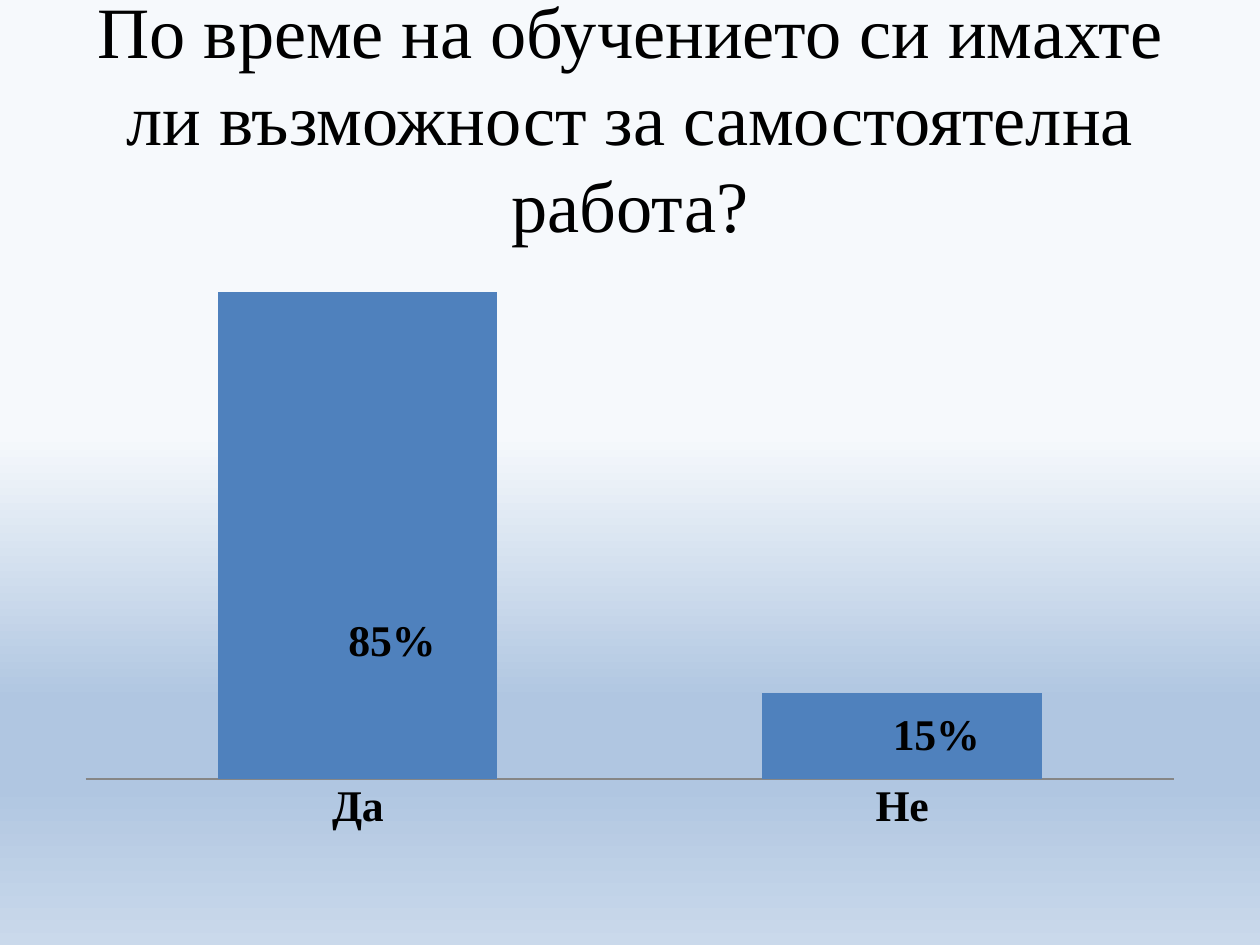
from lxml.etree import SubElement
from pptx import Presentation
from pptx.chart.data import CategoryChartData
from pptx.dml.color import RGBColor
from pptx.enum.chart import XL_CHART_TYPE, XL_TICK_MARK
from pptx.enum.text import MSO_ANCHOR, MSO_AUTO_SIZE, PP_ALIGN
from pptx.oxml.ns import qn
from pptx.util import Inches, Pt

COLORS = {
    "text": "000000",
    "bar": "4F81BD",
    "axis": "868686",
    "sky": "F6F9FC",
    "haze": "B0C6E1",
    "ground": "CAD9EB",
}
BACKGROUND_STOPS = [(46, "sky"), (74, "haze"), (83, "haze"), (100, "ground")]
FONT = "Times New Roman"
ANSWERS = {"Да": 0.85, "Не": 0.15}
LABEL_OFFSETS = [(0.03, 0.18), (0.03, 0)]


def rgb(name):
    return RGBColor.from_string(COLORS[name])


def style_font(font, size, bold=False, name=FONT):
    font.name = name
    font.size = Pt(size)
    font.bold = bold
    font.color.rgb = rgb("text")


def set_background(s):
    fill = s.background.fill
    fill.gradient()
    fill.gradient_angle = 270
    stops = s._element.find(".//" + qn("a:gsLst"))
    for stop in list(stops):
        stops.remove(stop)
    for percent, color in BACKGROUND_STOPS:
        stop = SubElement(stops, qn("a:gs"), pos=str(percent * 1000))
        SubElement(stop, qn("a:srgbClr"), val=COLORS[color])


def set_title(s, text):
    sp = s.shapes.title
    sp.left, sp.top = Inches(0.5), Inches(0.3)
    sp.width, sp.height = Inches(9), Inches(1.25)
    tf = sp.text_frame
    tf.text = text
    tf.vertical_anchor = MSO_ANCHOR.MIDDLE
    tf.auto_size = MSO_AUTO_SIZE.NONE
    tf.margin_left = tf.margin_right = Inches(0.2)
    p = tf.paragraphs[0]
    p.alignment = PP_ALIGN.CENTER
    style_font(p.font, 41.3)


def add_layout(parent, index, values):
    """Insert a manual chart layout; values are fractions of the chart size."""
    layout = SubElement(parent, qn("c:layout"))
    parent.insert(index, layout)
    manual = SubElement(layout, qn("c:manualLayout"))
    for tag, value in values.items():
        SubElement(manual, qn("c:" + tag), val=str(value))


def add_answer_chart(s):
    data = CategoryChartData(number_format="0%")
    data.categories = list(ANSWERS)
    data.add_series("Series 1", list(ANSWERS.values()))
    chart = s.shapes.add_chart(
        XL_CHART_TYPE.COLUMN_STACKED,
        Inches(0.5), Inches(2), Inches(9), Inches(4.7), data,
    ).chart
    chart.has_legend = False
    chart.has_title = False
    style_font(chart.font, 18, name="Calibri")

    axis = chart.category_axis
    axis.major_tick_mark = XL_TICK_MARK.NONE
    axis.format.line.color.rgb = rgb("axis")
    style_font(axis.tick_labels.font, 25, bold=True)
    scale = chart.value_axis
    scale.visible = False
    scale.has_major_gridlines = False
    scale.minimum_scale, scale.maximum_scale = 0, 0.9
    scale.tick_labels.number_format = "0%"
    scale.tick_labels.number_format_is_linked = False

    plot = chart.plots[0]
    plot.gap_width, plot.overlap = 95, 100
    plot_area = chart._chartSpace.chart.plotArea
    for layout in plot_area.findall(qn("c:layout")):
        plot_area.remove(layout)
    add_layout(plot_area, 0, {
        "layoutTarget": "inner", "xMode": "edge", "yMode": "edge",
        "x": 0.02, "y": 0.02, "w": 0.96, "h": 0.87,
    })
    label_bars(plot.series[0])


def label_bars(series):
    series.format.fill.solid()
    series.format.fill.fore_color.rgb = rgb("bar")
    labels = series.data_labels
    labels.show_value = True
    labels.number_format = "0%"
    labels.number_format_is_linked = False
    style_font(labels.font, 25, bold=True)
    for leader in labels._element.findall(qn("c:showLeaderLines")):
        leader.set("val", "0")
    for i, (x, y) in enumerate(LABEL_OFFSETS):
        label = series.points[i].data_label
        style_font(label.font, 25, bold=True)
        add_layout(label._dLbl, 1, {"x": x, "y": y})


def main():
    prs = Presentation()
    prs.slide_width, prs.slide_height = Inches(10), Inches(7.5)
    s = prs.slides.add_slide(prs.slide_layouts[5])
    set_background(s)
    set_title(s, "По време на обучението си имахте ли възможност "
                 "за самостоятелна работа?")
    add_answer_chart(s)
    prs.save("out.pptx")


if __name__ == "__main__":
    main()
